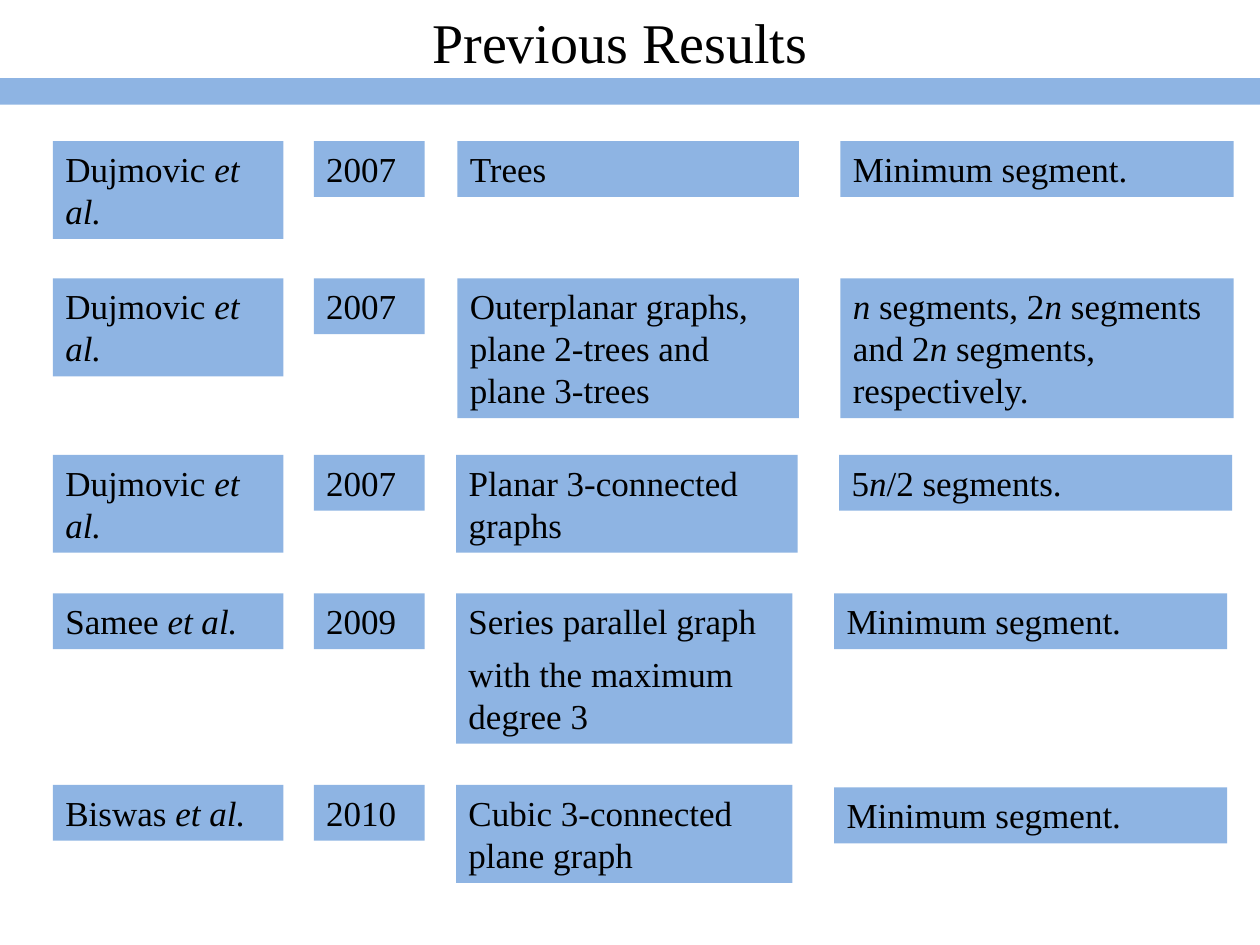
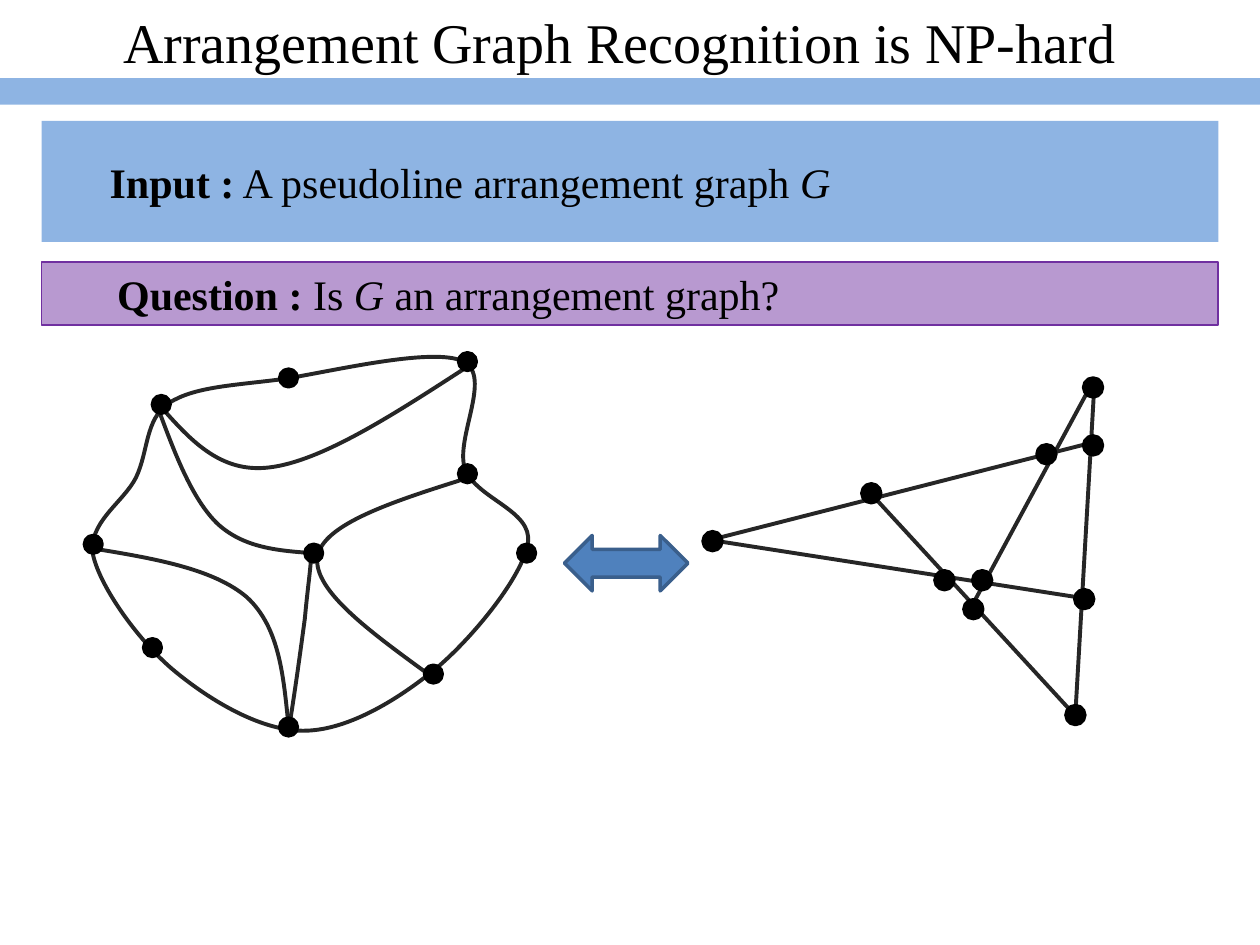
from dataclasses import dataclass

from lxml.etree import SubElement
from pptx import Presentation
from pptx.dml.color import RGBColor
from pptx.enum.shapes import MSO_CONNECTOR, MSO_SHAPE
from pptx.enum.text import MSO_ANCHOR, MSO_AUTO_SIZE, PP_ALIGN
from pptx.oxml.ns import qn
from pptx.util import Inches, Pt


@dataclass(frozen=True)
class Theme:
    """Colours, font and type sizes shared by the slides."""
    font: str = "Times New Roman"
    title_size: int = 32
    statement_size: int = 24
    cell_size: int = 20
    black: RGBColor = RGBColor.from_string("000000")
    band: RGBColor = RGBColor.from_string("8EB4E3")
    purple: RGBColor = RGBColor.from_string("7030A0")
    edge: RGBColor = RGBColor.from_string("262626")
    arrow: RGBColor = RGBColor.from_string("4F81BD")
    arrow_line: RGBColor = RGBColor.from_string("3A5F8C")
    edge_width: float = 2.25
    outline_width: float = 2


THEME = Theme()

LABEL_COLUMNS = [(0.42, 1.83), (2.49, 0.88)]
WIDE_COLUMNS = LABEL_COLUMNS + [(3.63, 2.71), (6.67, 3.12)]
MIDDLE_COLUMNS = LABEL_COLUMNS + [(3.62, 2.71), (6.66, 3.12)]
NARROW_COLUMNS = LABEL_COLUMNS + [(3.62, 2.67), (6.62, 3.12)]

RESULTS = [
    (1.12, WIDE_COLUMNS, 0, [
        ("Dujmovic *et al.*", 2), ("2007", 1), ("Trees", 1),
        ("Minimum segment.", 1)]),
    (4.71, NARROW_COLUMNS, 6, [
        ("Samee *et al.*", 1), ("2009", 1),
        ("Series parallel graph\nwith the maximum degree 3", 3.25),
        ("Minimum segment.", 1)]),
    (2.21, WIDE_COLUMNS, 0, [
        ("Dujmovic *et al.*", 2), ("2007", 1),
        ("Outerplanar graphs, plane 2-trees and plane 3-trees", 3),
        ("*n* segments, 2*n* segments and 2*n* segments, respectively.", 3)]),
    (6.23, NARROW_COLUMNS, 0, [
        ("Biswas *et al.*", 1), ("2010", 1),
        ("Cubic 3-connected\nplane graph", 2),
        ("Minimum segment.", 1, 0.02)]),
    (3.61, MIDDLE_COLUMNS, 0, [
        ("Dujmovic *et al.*", 2), ("2007", 1),
        ("Planar 3-connected graphs", 2), ("5*n*/2 segments.", 1)]),
]

OUTER_CYCLE = [
    (2.24, 3.01), (1.85, 3.06), (1.54, 3.07), (1.34, 3.2),
    (1.15, 3.33), (1.18, 3.58), (1.08, 3.79),
    (0.98, 3.99), (0.69, 4.15), (0.74, 4.41),
    (0.8, 4.67), (1.11, 5.1), (1.39, 5.33),
    (1.67, 5.56), (2.08, 5.81), (2.43, 5.8),
    (2.78, 5.79), (3.18, 5.54), (3.48, 5.29),
    (3.77, 5.04), (4.15, 4.57), (4.19, 4.31),
    (4.23, 4.05), (3.78, 3.96), (3.69, 3.72),
    (3.61, 3.48), (3.91, 2.99), (3.68, 2.87),
    (3.44, 2.75), (2.63, 2.95), (2.24, 3.01),
]
INNER_CURVES = [
    [(1.26, 3.21), (1.5, 3.48), (1.74, 3.76), (2.14, 3.71),
     (2.55, 3.66), (3.11, 3.3), (3.68, 2.93)],
    [(0.72, 4.35), (1.21, 4.43), (1.69, 4.51), (1.96, 4.74),
     (2.22, 4.98), (2.25, 5.37), (2.29, 5.76)],
    [(3.44, 5.38), (2.96, 5.03), (2.48, 4.69), (2.52, 4.42),
     (2.56, 4.16), (3.12, 3.98), (3.69, 3.8)],
    [(1.24, 3.2), (1.38, 3.58), (1.52, 3.96), (1.73, 4.16),
     (1.94, 4.35), (2.21, 4.37), (2.48, 4.39)],
    [(2.47, 4.42), (2.46, 4.56), (2.44, 4.69), (2.42, 4.91),
     (2.39, 5.13), (2.35, 5.43), (2.3, 5.74)],
]
PSEUDOLINE_VERTICES = [
    (2.22, 2.93), (3.64, 2.8), (1.21, 3.14), (0.67, 4.25), (1.14, 5.07),
    (2.22, 5.7), (2.42, 4.32), (3.64, 3.69), (4.11, 4.32), (3.37, 5.28),
]
STRAIGHT_EDGES = [
    ((5.73, 4.3), (8.68, 4.76)), ((8.68, 3.15), (8.53, 5.75)),
    ((8.62, 3.13), (7.67, 4.89)), ((6.96, 3.97), (8.58, 5.73)),
    ((5.58, 4.3), (8.6, 3.53)),
]
STRAIGHT_VERTICES = [
    (5.58, 4.22), (6.84, 3.84), (8.23, 3.53), (8.6, 3.46), (8.6, 3),
    (8.53, 4.68), (7.72, 4.53), (7.42, 4.53), (7.65, 4.76), (8.46, 5.6),
]


def style_font(font, size):
    """Apply the shared typeface and colour at the given size."""
    font.name = THEME.font
    font.size = Pt(size)
    font.color.rgb = THEME.black


def style_line(line, color, width):
    """Give a line its colour and width."""
    line.color.rgb = color
    line.width = Pt(width)


def add_preset(shapes, kind, left, top, width, height, fill):
    """Add a flat preset shape without an outline."""
    shape = shapes.add_shape(
        kind, Inches(left), Inches(top), Inches(width), Inches(height))
    shape.shadow.inherit = False
    shape.fill.solid()
    shape.fill.fore_color.rgb = fill
    shape.line.fill.background()
    return shape


def write_text(box, text, size, lead="", gap=0):
    """Write left-aligned lines, with a bold lead and *italic* spans."""
    frame = box.text_frame
    frame.word_wrap = True
    for index, line in enumerate(text.split("\n")):
        para = frame.paragraphs[0] if index == 0 else frame.add_paragraph()
        para.alignment = PP_ALIGN.LEFT
        para.space_before = Pt(gap)
        style_font(para.font, size)
        if lead and index == 0:
            span = para.add_run()
            span.text = lead
            span.font.bold = True
        for position, piece in enumerate(line.split("*")):
            if piece:
                span = para.add_run()
                span.text = piece
                if position % 2:
                    span.font.italic = True


def add_page(deck, title):
    """Add a slide with the shared title and band."""
    page = deck.slides.add_slide(deck.slide_layouts[5])
    box = page.shapes.title
    box.left, box.top = Inches(0.42), Inches(0.08)
    box.width, box.height = Inches(9), Inches(0.5)
    frame = box.text_frame
    frame.text = title
    frame.auto_size = MSO_AUTO_SIZE.NONE
    frame.vertical_anchor = MSO_ANCHOR.MIDDLE
    para = frame.paragraphs[0]
    para.alignment = PP_ALIGN.CENTER
    style_font(para.font, THEME.title_size)
    add_preset(page.shapes, MSO_SHAPE.RECTANGLE, 0, 0.62, 10, 0.21, THEME.band)
    return page


def add_result_row(page, top, columns, gap, cells):
    """Add one grouped row of boxes, each as tall as its lines of text."""
    row = page.shapes.add_group_shape().shapes
    for (left, width), (text, lines, *drop) in zip(columns, cells):
        box = add_preset(row, MSO_SHAPE.RECTANGLE, left, top + sum(drop),
                         width, 0.11 + lines / 3, THEME.band)
        box.text_frame.vertical_anchor = MSO_ANCHOR.TOP
        write_text(box, text, THEME.cell_size, gap=gap)


def add_statement(page, top, height, fill, indent, lead, text):
    """Add a full-width box with a bold lead and indented text."""
    box = add_preset(
        page.shapes, MSO_SHAPE.RECTANGLE, 0.33, top, 9.34, height, fill)
    box.text_frame.vertical_anchor = MSO_ANCHOR.MIDDLE
    box.text_frame.margin_left = Inches(0.1 + indent)
    write_text(box, text, THEME.statement_size, lead)
    return box


def set_opacity(shape, percent):
    """Make the solid fill of a shape partly transparent."""
    color = shape._element.spPr.find(qn("a:solidFill")).find(qn("a:srgbClr"))
    SubElement(color, qn("a:alpha"), val=str(percent * 1000))


def bend_segments(curve):
    """Turn each three line segments of a freeform into one cubic curve."""
    outline = next(curve._element.iter(qn("a:pathLst")))[0]
    segments = outline.findall(qn("a:lnTo"))
    for first in range(0, len(segments), 3):
        bend = SubElement(outline, qn("a:cubicBezTo"))
        for segment in segments[first:first + 3]:
            bend.append(segment[0])
            outline.remove(segment)
    for close in outline.findall(qn("a:close")):
        outline.append(close)


def add_curve(shapes, controls, close=False):
    """Add an unfilled curved edge from its Bezier control points."""
    points = [(Inches(x), Inches(y)) for x, y in controls]
    builder = shapes.build_freeform(*points[0])
    builder.add_line_segments(points[1:], close=close)
    curve = builder.convert_to_shape()
    bend_segments(curve)
    curve.shadow.inherit = False
    curve.fill.background()
    style_line(curve.line, THEME.edge, THEME.edge_width)


def add_edge(shapes, start, end):
    """Add a straight edge."""
    ends = [Inches(value) for value in start + end]
    edge = shapes.add_connector(MSO_CONNECTOR.STRAIGHT, *ends)
    style_line(edge.line, THEME.edge, THEME.edge_width)
    SubElement(edge._element.spPr, qn("a:effectLst"))


def add_vertices(shapes, corners, size):
    """Add a black dot at each top-left corner."""
    for left, top in corners:
        dot = add_preset(
            shapes, MSO_SHAPE.OVAL, left, top, size, size, THEME.black)
        style_line(dot.line, THEME.black, THEME.outline_width)


def add_straight_graph(page):
    """Add the line arrangement graph."""
    graph = page.shapes.add_group_shape().shapes
    for start, end in STRAIGHT_EDGES:
        add_edge(graph, start, end)
    add_vertices(graph, STRAIGHT_VERTICES, 0.15)


def add_pseudoline_graph(page):
    """Add the pseudoline arrangement graph."""
    graph = page.shapes.add_group_shape().shapes
    add_curve(graph, OUTER_CYCLE, close=True)
    for controls in INNER_CURVES:
        add_curve(graph, controls)
    add_vertices(graph, PSEUDOLINE_VERTICES, 0.14)


def add_results_page(deck):
    """Build the slide of previous results."""
    page = add_page(deck, "Previous Results")
    for top, columns, gap, cells in RESULTS:
        add_result_row(page, top, columns, gap, cells)


def add_recognition_page(deck):
    """Build the slide on recognising arrangement graphs."""
    page = add_page(deck, "Arrangement Graph Recognition is NP-hard")
    add_straight_graph(page)
    question = add_statement(page, 2.08, 0.5, THEME.purple, 0.5,
                             "Question : ", "Is *G* an arrangement graph?")
    set_opacity(question, 49)
    style_line(question.line, THEME.purple, 1)
    add_pseudoline_graph(page)
    add_statement(page, 0.96, 0.96, THEME.band, 0.44,
                  "Input :", " A pseudoline arrangement graph *G*")
    arrow = add_preset(page.shapes, MSO_SHAPE.LEFT_RIGHT_ARROW,
                       4.48, 4.25, 0.98, 0.44, THEME.arrow)
    style_line(arrow.line, THEME.arrow_line, THEME.outline_width)


def main():
    """Build and save the deck."""
    deck = Presentation()
    deck.slide_width, deck.slide_height = Inches(10), Inches(7.5)
    add_results_page(deck)
    add_recognition_page(deck)
    deck.save("out.pptx")


if __name__ == "__main__":
    main()
